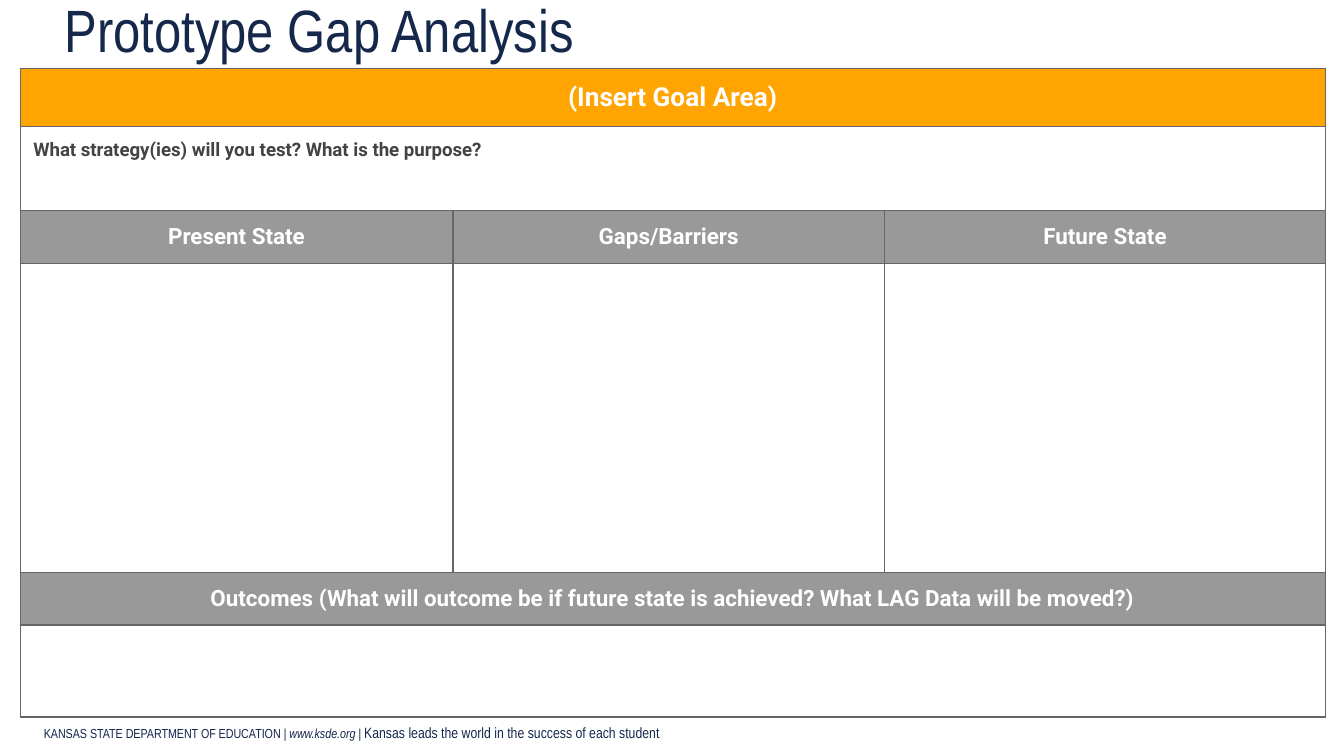
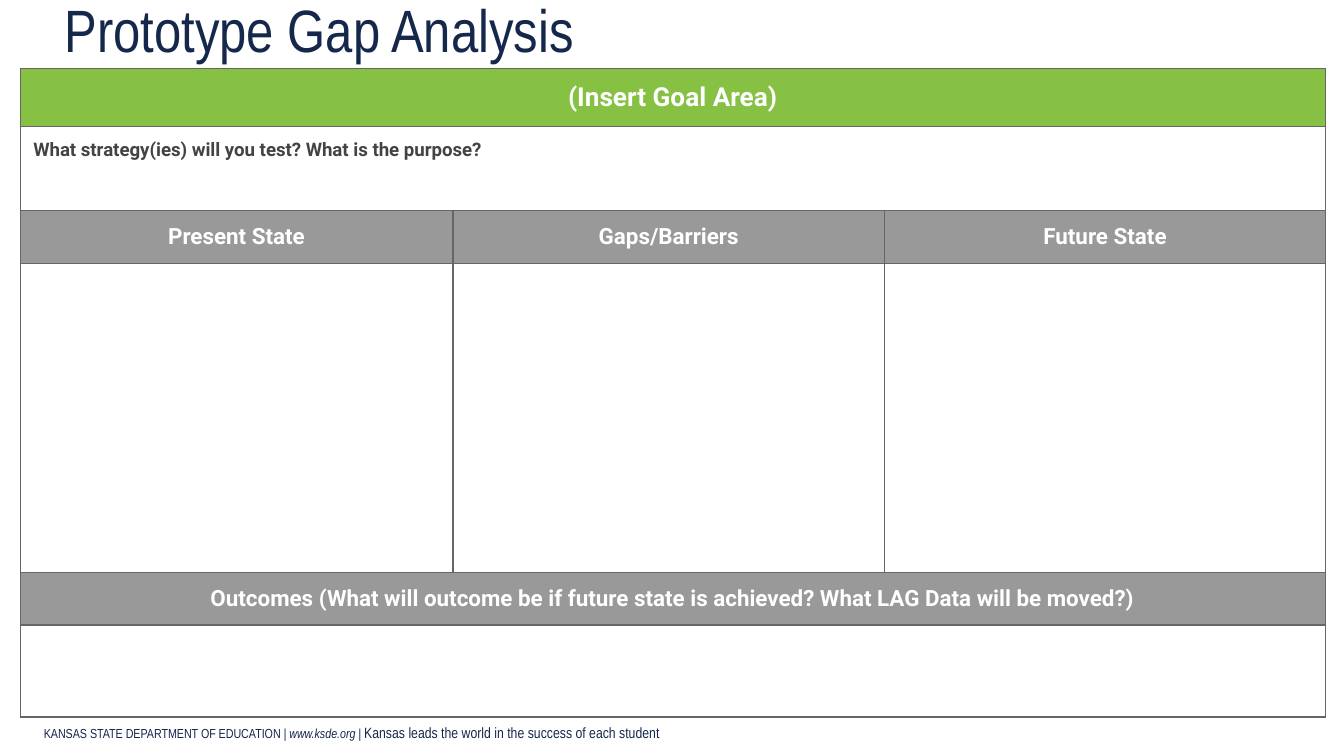
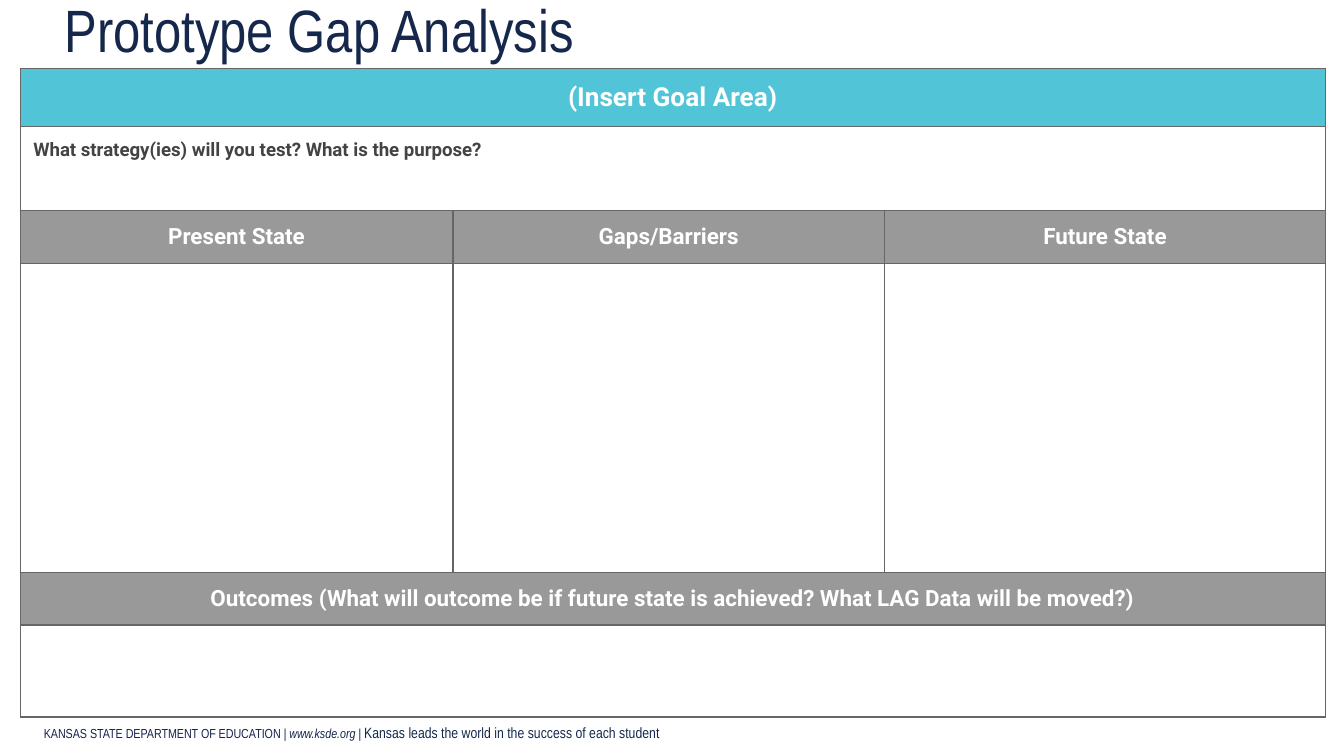
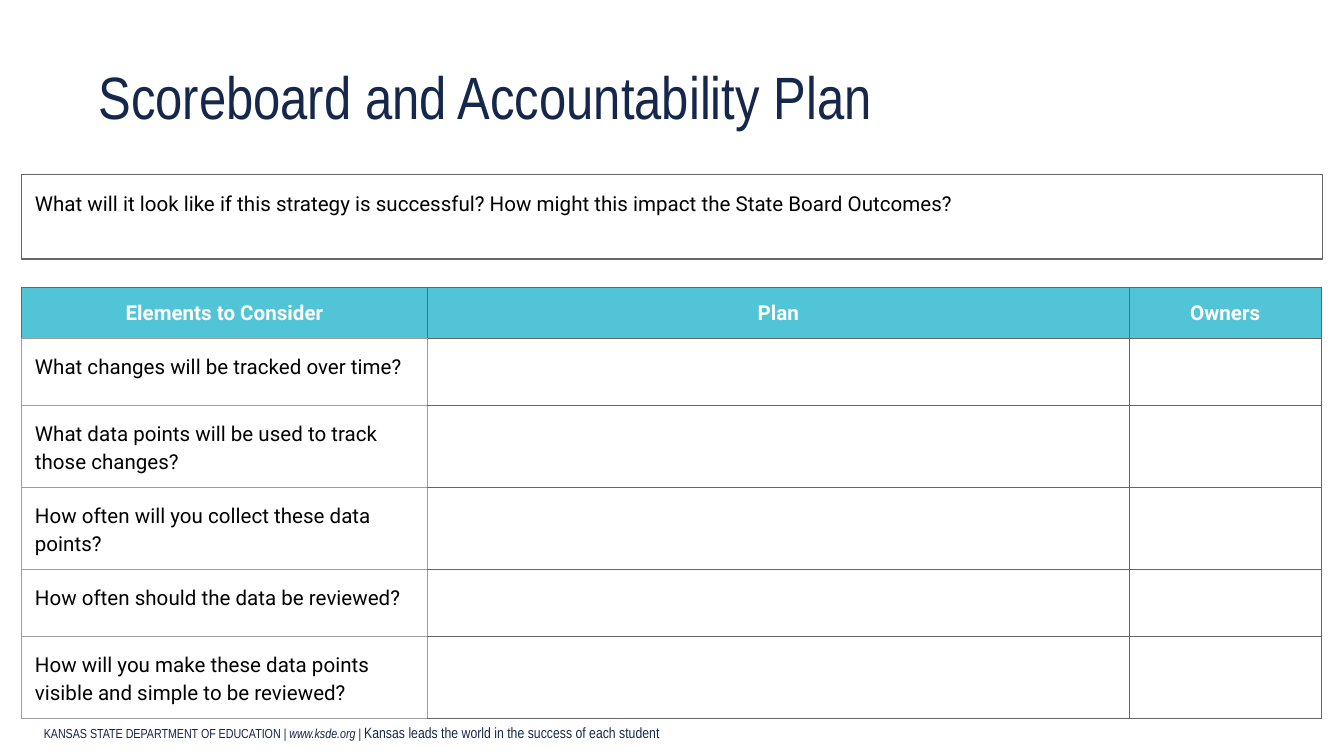
from pptx import Presentation
from pptx.dml.color import RGBColor
from pptx.enum.shapes import MSO_SHAPE
from pptx.enum.text import MSO_ANCHOR as ANCHOR, MSO_AUTO_SIZE, PP_ALIGN as ALIGN
from pptx.oxml.ns import qn
from pptx.util import Cm, Pt
from lxml.etree import SubElement

NAVY, FOOTER_NAVY = "15284B", "15254B"
ORANGE, GREEN, TEAL = "FFA400", "86C144", "51C5D7"
WHITE, BLACK, GREY, CHARCOAL = "FFFFFF", "000000", "999999", "434343"
BORDER, LIGHT_BORDER = "666666", "9E9E9E"
HEADING, BODY = "Arial Narrow", "Roboto"
PAD = 0.25
BORDER_PT = 0.75

GAP_COLS = [1.52, 5.11, 1.55, 3, 2.29, 2.87, 8.33]
GAP_ROWS = [1.08, 1.59, 1, 5.84, 0.98, 1.74]
STATE_COLS = [(0, 2), (3, 5), (6, 6)]
STATES = ["Present State", "Gaps/Barriers", "Future State"]

PLAN_COLS = [7.67, 13.26, 3.63]
PLAN_ROWS = [0.95, 1.23, 1.55, 1.54, 1.23, 1.55]
PLAN_HEADERS = ["Elements to Consider", "Plan", "Owners"]
QUESTIONS = [
    "What changes will be tracked over time?",
    "What data points will be used to track those changes?",
    "How often will you collect these data points?",
    "How often should the data be reviewed?",
    "How will you make these data points visible and simple to be reviewed?",
]


def rgb(value):
    return RGBColor.from_string(value)


def set_fill(obj, color):
    obj.fill.solid()
    obj.fill.fore_color.rgb = rgb(color)


def add_text(p, text, size=11, font=BODY, color=BLACK, bold=False, italic=False,
             align=ALIGN.LEFT, spacing=None):
    """Append a formatted run to paragraph p."""
    p.alignment = align
    if spacing:
        p.line_spacing = spacing
    r = p.add_run()
    r.text = text
    f = r.font
    f.size, f.name, f.bold, f.italic = Pt(size), font, bold, italic
    f.color.rgb = rgb(color)


def set_frame(tf, anchor=ANCHOR.TOP, left=PAD, top=PAD, right=PAD, bottom=PAD):
    tf.word_wrap = True
    tf.auto_size = MSO_AUTO_SIZE.NONE
    tf.vertical_anchor = anchor
    tf.margin_left, tf.margin_top = Cm(left), Cm(top)
    tf.margin_right, tf.margin_bottom = Cm(right), Cm(bottom)


def add_footer(slide):
    tf = slide.shapes.add_textbox(Cm(0.58), Cm(13.54), Cm(16.76), Cm(0.61)).text_frame
    set_frame(tf, ANCHOR.BOTTOM, top=0.13, bottom=0.13)
    p = tf.paragraphs[0]
    small = dict(size=7, font=HEADING, color=FOOTER_NAVY)
    add_text(p, "KANSAS STATE DEPARTMENT OF EDUCATION ", **small)
    add_text(p, "| www.ksde.org | ", italic=True, **small)
    add_text(p, "Kansas leads the world in the success of each student",
             size=8, font=HEADING, color=NAVY)


def add_slide(prs, title, left, top):
    slide = prs.slides.add_slide(prs.slide_layouts[5])
    sp = slide.shapes.title
    sp.left, sp.top, sp.width, sp.height = Cm(left), Cm(top), Cm(24.13), Cm(2.49)
    set_frame(sp.text_frame, ANCHOR.BOTTOM, left=1.02, bottom=0)
    add_text(sp.text_frame.paragraphs[0], title, size=32, font=HEADING, color=NAVY)
    add_footer(slide)
    return slide


def set_borders(cell, left=BORDER, right=BORDER, top=BORDER, bottom=BORDER):
    tc_pr = cell._tc.get_or_add_tcPr()
    for side, color in zip("LRTB", (left, right, top, bottom)):
        ln = SubElement(tc_pr, qn(f"a:ln{side}"), w=str(Pt(BORDER_PT)))
        SubElement(SubElement(ln, qn("a:solidFill")), qn("a:srgbClr"), val=color)


def border_colors(row, col, light_first_col):
    """Lighter borders around the first column's body cells."""
    if not light_first_col:
        return {}
    if row == 0:
        return {"bottom": LIGHT_BORDER} if col == 0 else {}
    sides = {0: ("left", "right", "top", "bottom"), 1: ("left",)}.get(col, ())
    return dict.fromkeys(sides, LIGHT_BORDER)


def add_grid(slide, left, top, cols, rows, light_first_col=False):
    """Add a white, bordered table with the given column widths and row heights."""
    table = slide.shapes.add_table(len(rows), len(cols), Cm(left), Cm(top),
                                   Cm(sum(cols)), Cm(sum(rows))).table
    table.first_row = table.horz_banding = False
    for column, width in zip(table.columns, cols):
        column.width = Cm(width)
    for i, height in enumerate(rows):
        table.rows[i].height = Cm(height)
        for j in range(len(cols)):
            cell = table.cell(i, j)
            cell.margin_left = cell.margin_right = Cm(PAD)
            cell.margin_top = cell.margin_bottom = Cm(PAD)
            set_borders(cell, **border_colors(i, j, light_first_col))
            set_fill(cell, WHITE)
    return table


def fill_cell(cell, text, fill=WHITE, anchor=ANCHOR.TOP, **style):
    set_fill(cell, fill)
    cell.vertical_anchor = anchor
    add_text(cell.text_frame.paragraphs[0], text, **style)


def add_gap_slide(prs, accent):
    slide = add_slide(prs, "Prototype Gap Analysis", 0.2, -1.27)
    table = add_grid(slide, 0.38, 1.3, GAP_COLS, GAP_ROWS)
    last = len(GAP_COLS) - 1
    for row in (0, 1, 4, 5):
        table.cell(row, 0).merge(table.cell(row, last))
    for row in (2, 3):
        for first, end in STATE_COLS:
            if end > first:
                table.cell(row, first).merge(table.cell(row, end))

    header = dict(color=WHITE, bold=True, align=ALIGN.CENTER)
    band = dict(header, fill=GREY, anchor=ANCHOR.MIDDLE, size=12)
    fill_cell(table.cell(0, 0), "(Insert Goal Area)", fill=accent, size=14, **header)
    fill_cell(table.cell(1, 0), "What strategy(ies) will you test? What is the purpose?",
              size=10, color=CHARCOAL, bold=True)
    for (first, _), state in zip(STATE_COLS, STATES):
        fill_cell(table.cell(2, first), state, **band)
    fill_cell(table.cell(4, 0), "Outcomes (What will outcome be if future state is achieved? "
              "What LAG Data will be moved?)", **band)


def add_success_box(slide):
    sp = slide.shapes.add_shape(MSO_SHAPE.RECTANGLE, Cm(0.41), Cm(3.3), Cm(24.59), Cm(1.6))
    sp.shadow.inherit = False
    set_fill(sp, WHITE)
    sp.line.color.rgb = rgb(BORDER)
    sp.line.width = Pt(BORDER_PT)
    set_frame(sp.text_frame)
    add_text(sp.text_frame.paragraphs[0],
             "What will it look like if this strategy is successful? "
             "How might this impact the State Board Outcomes?", spacing=1.15)


def add_plan_slide(prs):
    slide = add_slide(prs, "Scoreboard and Accountability Plan", 0.84, 0)
    add_success_box(slide)
    table = add_grid(slide, 0.41, 5.44, PLAN_COLS, PLAN_ROWS, light_first_col=True)
    for col, text in enumerate(PLAN_HEADERS):
        fill_cell(table.cell(0, col), text, fill=TEAL, color=WHITE, bold=True,
                  align=ALIGN.CENTER)
    for row, text in enumerate(QUESTIONS, start=1):
        fill_cell(table.cell(row, 0), text, spacing=1.15)


def main():
    prs = Presentation()
    prs.slide_width, prs.slide_height = Cm(25.4), Cm(14.29)
    for accent in (ORANGE, GREEN, TEAL):
        add_gap_slide(prs, accent)
    add_plan_slide(prs)
    prs.save("out.pptx")


if __name__ == "__main__":
    main()
